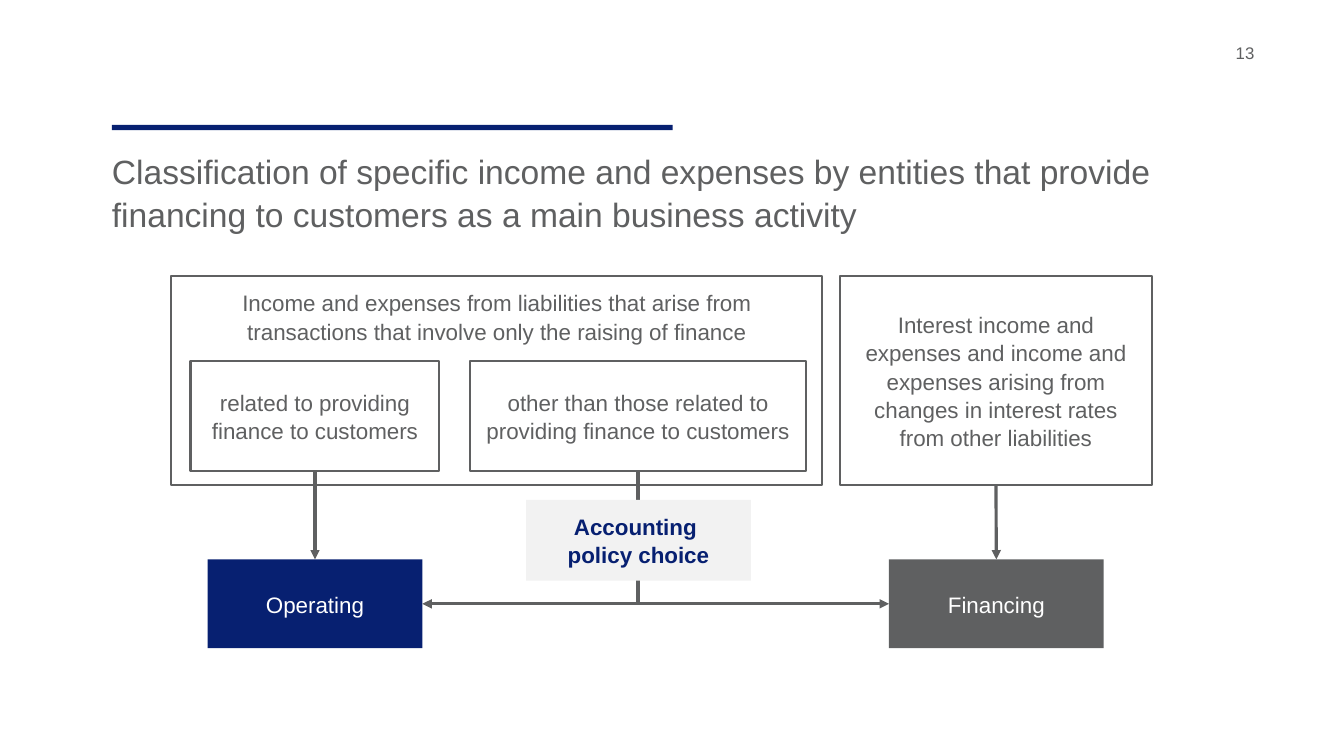
import pptx
import pptx.dml.color
import pptx.enum.shapes
import pptx.enum.text
import pptx.oxml
import pptx.oxml.ns
import pptx.util

Pt = pptx.util.Pt
ALIGN = pptx.enum.text.PP_ALIGN
ANCHOR = pptx.enum.text.MSO_ANCHOR
TOP, LEFT, BOTTOM, RIGHT = range(4)

TITLE = ("Classification of specific income and expenses by entities that "
         "provide financing to customers as a main business activity")
PAGE_NUMBER = "13"

THEME = {
    "font": "Arial", "title": 24, "box": 16, "number": 12, "spacing": 1.05,
    "navy": "072071", "gray": "5F6061", "pale": "F2F2F2", "white": "FFFFFF",
    "border": 1.5, "arrow": 2.25,
}

SOURCE_TOP, SOURCE_HEIGHT = 197.3, 149
DETAIL_TOP, DETAIL_HEIGHT = 257.8, 78.5
RESULT_TOP, RESULT_WIDTH, RESULT_HEIGHT = 399.6, 153.4, 63.4

BOXES = {
    "raising": {
        "text": ["Income and expenses from liabilities that arise from "
                 "transactions that involve only the raising of finance"],
        "at": (122.4, SOURCE_TOP, 465.1, SOURCE_HEIGHT), "fill": "white",
        "ink": "gray", "border": True, "anchor": ANCHOR.TOP, "inset": 8.6},
    "other liabilities": {
        "text": ["Interest income and expenses and income and expenses arising "
                 "from changes in interest rates from other liabilities"],
        "at": (599.8, SOURCE_TOP, 223.2, SOURCE_HEIGHT), "fill": "white",
        "ink": "gray", "border": True},
    "related": {
        "text": ["related to providing finance to customers"],
        "at": (136.1, DETAIL_TOP, 177.8, DETAIL_HEIGHT), "fill": "white",
        "ink": "gray", "border": True},
    "unrelated": {
        "text": ["other than those related to providing finance to customers"],
        "at": (335.5, DETAIL_TOP, 240.5, DETAIL_HEIGHT), "fill": "white",
        "ink": "gray", "border": True},
    "operating": {
        "text": ["Operating"], "fill": "navy", "ink": "white",
        "at": (148.3, RESULT_TOP, RESULT_WIDTH, RESULT_HEIGHT)},
    "financing": {
        "text": ["Financing"], "fill": "gray", "ink": "white",
        "at": (635, RESULT_TOP, RESULT_WIDTH, RESULT_HEIGHT)},
}
POLICY = {"text": ["Accounting ", "policy choice"], "fill": "pale",
          "ink": "navy", "bold": True, "at": (375.8, 357.1, 160.6, 57.6)}

ARROWS = [
    ("other liabilities", BOTTOM, "financing", TOP, ["tailEnd"]),
    ("related", BOTTOM, "operating", TOP, ["tailEnd"]),
    ("operating", RIGHT, "financing", LEFT, ["headEnd", "tailEnd"]),
]


def color(name):
    return pptx.dml.color.RGBColor.from_string(THEME[name])


def apply(target, values):
    for name, value in values.items():
        setattr(target, name, value)


def write(frame, lines, size, ink, align, bold=False):
    frame.text = "\n".join(lines)
    for paragraph in frame.paragraphs:
        apply(paragraph, {"alignment": align, "line_spacing": THEME["spacing"],
                          "space_before": Pt(0)})
        for run in paragraph.runs:
            apply(run.font, {"name": THEME["font"], "size": Pt(THEME[size]),
                             "bold": bold})
            run.font.color.rgb = color(ink)


def add_rectangle(slide, at, fill, border=False):
    shape = slide.shapes.add_shape(
        pptx.enum.shapes.MSO_SHAPE.RECTANGLE, *map(Pt, at))
    shape.shadow.inherit = False
    shape.fill.solid()
    shape.fill.fore_color.rgb = color(fill)
    if border:
        shape.line.color.rgb = color("gray")
        shape.line.width = Pt(THEME["border"])
    else:
        shape.line.fill.background()
    return shape


def add_box(slide, box):
    shape = add_rectangle(slide, box["at"], box["fill"], box.get("border", False))
    apply(shape.text_frame, {
        "word_wrap": True, "vertical_anchor": box.get("anchor", ANCHOR.MIDDLE),
        "margin_top": Pt(box.get("inset", 3.6))})
    write(shape.text_frame, box["text"], "box", box["ink"], ALIGN.CENTER,
          box.get("bold", False))
    return shape


def add_line(slide, ends=()):
    connector = slide.shapes.add_connector(
        pptx.enum.shapes.MSO_CONNECTOR.STRAIGHT, 0, 0, 0, 0)
    connector.line.color.rgb = color("gray")
    connector.line.width = Pt(THEME["arrow"])
    properties = connector._element.spPr
    outline = properties.find(pptx.oxml.ns.qn("a:ln"))
    for end in ends:
        outline.append(pptx.oxml.parse_xml(
            f'<a:{end} {pptx.oxml.ns.nsdecls("a")} type="triangle"/>'))
    properties.append(pptx.oxml.parse_xml(
        f'<a:effectLst {pptx.oxml.ns.nsdecls("a")}/>'))
    return connector


def main():
    presentation = pptx.Presentation()
    apply(presentation, {"slide_width": Pt(960), "slide_height": Pt(540)})
    slide = presentation.slides.add_slide(presentation.slide_layouts[5])

    add_rectangle(slide, (80, 89.3, 400.5, 3.8), "navy")

    title = slide.shapes.title
    apply(title, {"left": Pt(72.7), "top": Pt(103), "width": Pt(800.6),
                  "height": Pt(60.5)})
    apply(title.text_frame, {
        "word_wrap": True, "vertical_anchor": ANCHOR.TOP,
        "auto_size": pptx.enum.text.MSO_AUTO_SIZE.NONE})
    write(title.text_frame, [TITLE], "title", "gray", ALIGN.LEFT)

    number = slide.shapes.add_textbox(Pt(882.7), Pt(29.5), Pt(48.2), Pt(20.9))
    apply(number.text_frame, {
        "word_wrap": True, "margin_left": 0, "margin_top": 0,
        "margin_right": 0, "margin_bottom": 0})
    write(number.text_frame, [PAGE_NUMBER], "number", "gray", ALIGN.LEFT)

    shapes = {name: add_box(slide, box) for name, box in BOXES.items()}
    for start, start_side, finish, finish_side, ends in ARROWS:
        arrow = add_line(slide, ends)
        arrow.begin_connect(shapes[start], start_side)
        arrow.end_connect(shapes[finish], finish_side)

    stem = add_line(slide)
    stem.begin_connect(shapes["unrelated"], BOTTOM)
    stem.end_x = stem.begin_x
    stem.end_y = Pt(RESULT_TOP + RESULT_HEIGHT / 2)
    add_box(slide, POLICY)

    presentation.save("out.pptx")


if __name__ == "__main__":
    main()
